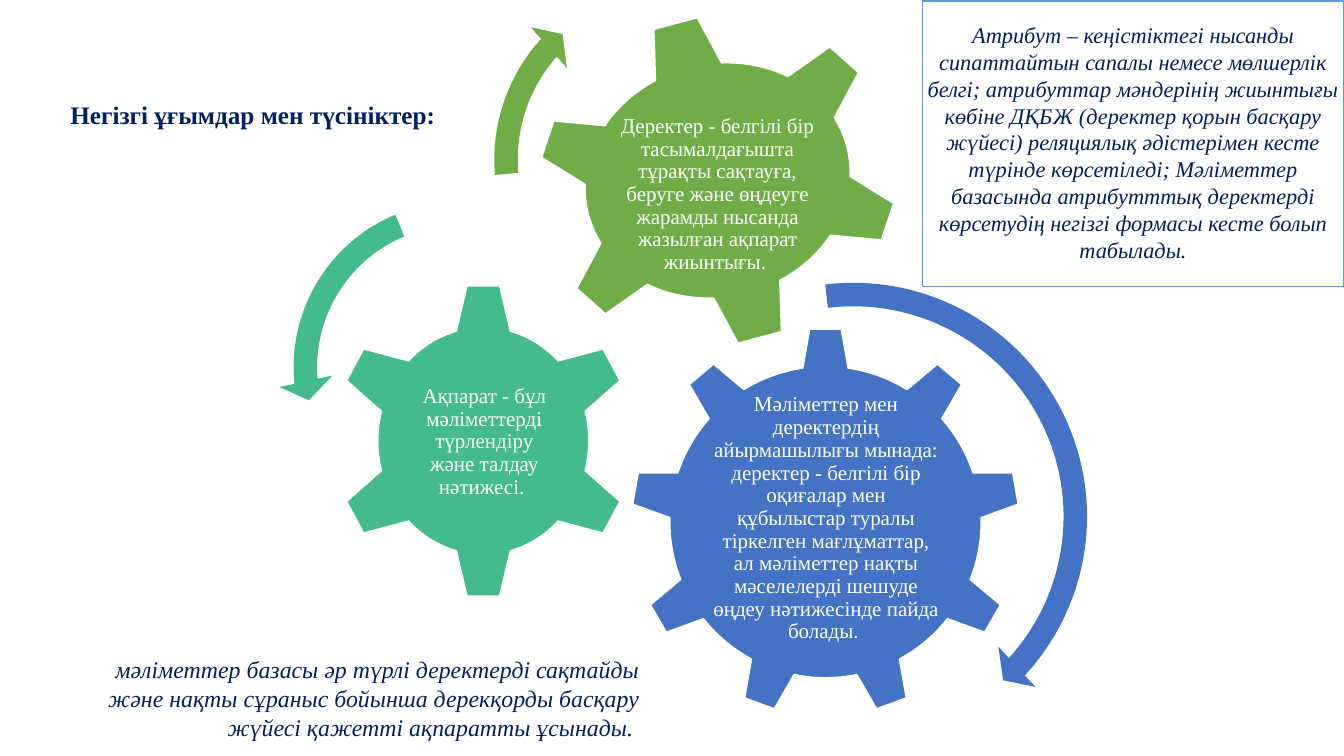
from dataclasses import dataclass

from pptx import Presentation
from pptx.dml.color import RGBColor
from pptx.enum.shapes import MSO_SHAPE as SHAPE
from pptx.enum.text import MSO_ANCHOR as ANCHOR, MSO_AUTO_SIZE as AUTO, PP_ALIGN as ALIGN
from pptx.util import Pt


@dataclass(frozen=True)
class Theme:
    font: str = "Times New Roman"
    white: str = "FFFFFF"
    navy: str = "002060"
    blue: str = "4472C4"
    teal: str = "43BB8D"
    green: str = "70AD47"
    border: str = "5B9BD5"
    gear_size: int = 15
    note_size: int = 16
    summary_size: int = 17
    title_size: int = 18


T = Theme()


def add_text(slide, box, text, size, color=T.navy, align=ALIGN.LEFT, bold=False,
             italic=False, anchor=ANCHOR.TOP, margin=None, spacing=None):
    s = slide.shapes.add_textbox(*map(Pt, box))
    tf = s.text_frame
    tf.word_wrap = True
    tf.vertical_anchor = anchor
    if margin is None:
        tf.auto_size = AUTO.SHAPE_TO_FIT_TEXT
    else:
        tf.margin_left = tf.margin_right = tf.margin_top = tf.margin_bottom = Pt(margin)
    p = tf.paragraphs[0]
    p.alignment = align
    if spacing:
        p.line_spacing = spacing
    r = p.add_run()
    r.text = text
    r.font.name, r.font.size = T.font, Pt(size)
    r.font.bold, r.font.italic = bold, italic
    r.font.color.rgb = RGBColor.from_string(color)
    return s


def add_filled(slide, kind, box, fill, line=None, rotation=0, adjust=()):
    s = slide.shapes.add_shape(kind, *map(Pt, box))
    s.shadow.inherit = False
    s.rotation = rotation
    s.fill.solid()
    s.fill.fore_color.rgb = RGBColor.from_string(fill)
    if line:
        s.line.color.rgb = RGBColor.from_string(line)
        s.line.width = Pt(1)
    else:
        s.line.fill.background()
    for i, value in enumerate(adjust):
        s.adjustments[i] = value
    return s


def add_gear(slide, box, kind, color, text, label, arrow_kind, arrow, adjust, rotation=0):
    """label is (dx, dy, width, height), arrow is (dx, dy, diameter), both from the gear's corner."""
    x, y = box[:2]
    add_filled(slide, kind, box, color, T.white, rotation)
    dx, dy, w, h = label
    add_text(slide, (x + dx, y + dy, w, h), text, T.gear_size, T.white, ALIGN.CENTER,
             anchor=ANCHOR.MIDDLE, margin=1.27, spacing=0.9)
    dx, dy, d = arrow
    add_filled(slide, arrow_kind, (x + dx, y + dy, d, d), color, adjust=adjust)


def add_gears(slide, box):
    x, y = box
    # Difference between information and data
    add_gear(slide, (x + 213.1, y + 223.9, 277.9, 277.9), SHAPE.GEAR_9, T.blue,
             "Мәліметтер мен деректердің айырмашылығы мынада: деректер - белгілі бір "
             "оқиғалар мен құбылыстар туралы тіркелген мағлұматтар, ал мәліметтер нақты "
             "мәселелерді шешуде өңдеу нәтижесінде пайда болады. ",
             (56.2, 64.8, 166.3, 143.3), SHAPE.CIRCULAR_ARROW, (-19.4, -43.2, 356.4),
             (0.047, 2.99, 25.522, 157.857, 0.055))
    # Information
    add_gear(slide, (x, y + 191.5, 215.3, 226.8), SHAPE.GEAR_6, T.teal,
             "Ақпарат - бұл мәліметтерді түрлендіру және талдау нәтижесі. ",
             (54.7, 56.9, 107.3, 114.5), SHAPE.LEFT_CIRCULAR_ARROW, (-38.9, -68.4, 258.5),
             (0.065, 4.3, 104.891, 148.378, 0.075))
    # Data
    add_gear(slide, (x + 144, y, 262.1, 237.6), SHAPE.GEAR_6, T.green,
             "Деректер - белгілі бір тасымалдағышта тұрақты сақтауға, беруге және өңдеуге "
             "жарамды нысанда жазылған ақпарат жиынтығы. ",
             (59, 61, 144, 136.1), SHAPE.CIRCULAR_ARROW, (-39.6, -35.3, 278.6),
             (0.06, 3.941, 133.138, 105.082, 0.07), rotation=345)


def add_note(slide, box):
    x, y, w, h = box
    add_filled(slide, SHAPE.RECTANGLE, box, T.white, T.border)
    add_text(slide, (x - 3.6, y + 10.8, w + 7.2, h - 22.3),
             "Атрибут – кеңістіктегі нысанды сипаттайтын сапалы немесе мөлшерлік белгі; "
             "атрибуттар мәндерінің жиынтығы көбіне ДҚБЖ (деректер қорын басқару жүйесі) "
             "реляциялық әдістерімен кесте түрінде көрсетіледі; Мәліметтер базасында "
             "атрибутттық деректерді көрсетудің негізгі формасы кесте болып табылады.",
             T.note_size, align=ALIGN.CENTER, italic=True)


def main():
    prs = Presentation()
    prs.slide_width, prs.slide_height = Pt(960), Pt(540)
    slide = prs.slides.add_slide(prs.slide_layouts[6])

    add_gears(slide, (237.6, 10.1))
    # Title and summary
    add_text(slide, (43.2, 67.7, 313.9, 28.8), "Негізгі ұғымдар мен түсініктер:",
             T.title_size, bold=True)
    add_text(slide, (46.8, 464.4, 416.9, 69.1),
             "мәліметтер базасы әр түрлі деректерді сақтайды және нақты сұраныс бойынша "
             "дерекқорды басқару жүйесі қажетті ақпаратты ұсынады. ",
             T.summary_size, align=ALIGN.RIGHT, italic=True)
    add_note(slide, (658.8, 0.7, 301, 203.8))

    prs.save("out.pptx")


if __name__ == "__main__":
    main()
